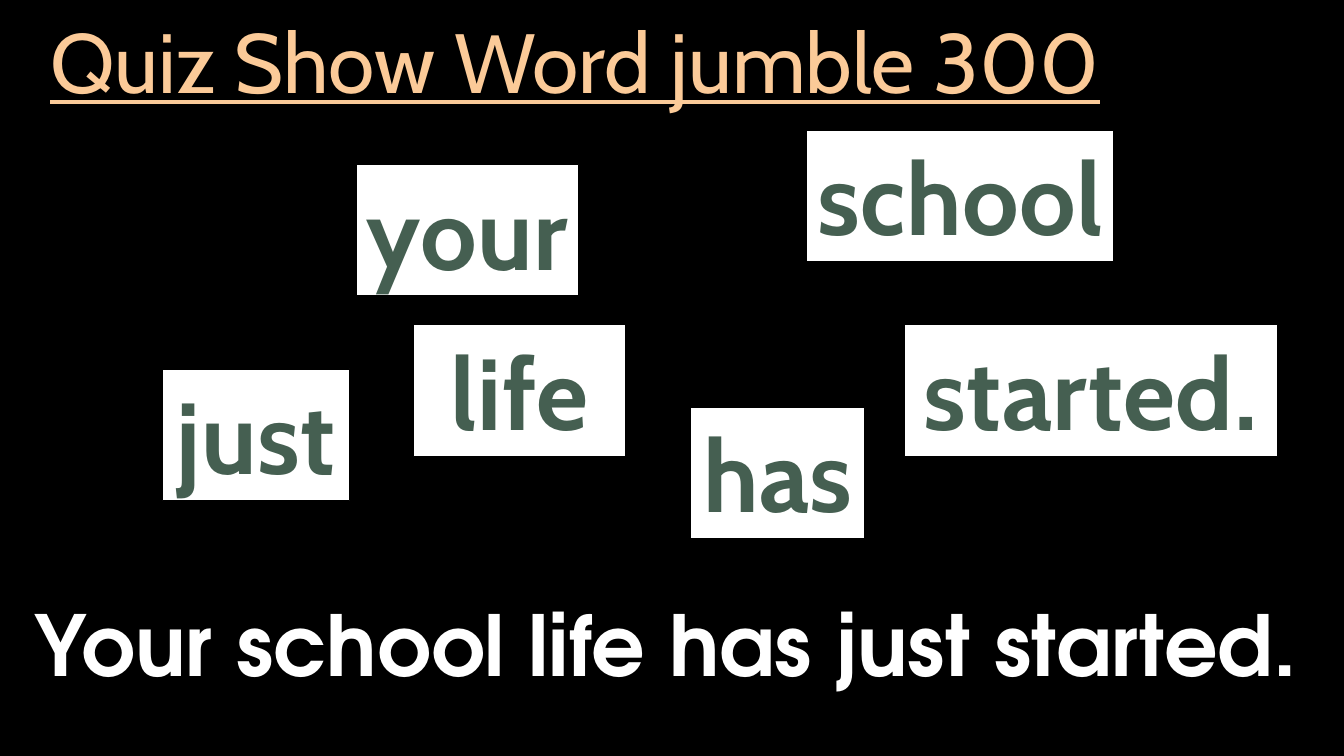
from pptx import Presentation
from pptx import util as u
from pptx.dml import color
from pptx.enum import shapes, text

HUES = {"night": "000000", "peach": "FBCA98", "card": "FFFFFF", "green": "455F51"}
HIGH = 17.45
CARDS = [
    ("your", 26.48, 21.73, 16.58),
    ("has", 51.39, 53.87, 12.98),
    ("life", 30.76, 42.93, 15.83),
    ("started.", 67.29, 42.93, 27.76),
    ("just", 12.08, 48.8, 13.95),
    ("school", 60.02, 17.2, 22.88),
]


def hue(name):
    return color.RGBColor.from_string(HUES[name])


def write(shape, words, size, tint, font="Cabin", bold=False, line=False,
          align=text.PP_ALIGN.CENTER, anchor=text.MSO_ANCHOR.TOP,
          wrap=False, grow=True, lead=1.0, track=0):
    frame = shape.text_frame
    frame.word_wrap = wrap
    frame.vertical_anchor = anchor
    fit = text.MSO_AUTO_SIZE
    frame.auto_size = fit.SHAPE_TO_FIT_TEXT if grow else fit.NONE
    para = frame.paragraphs[0]
    para.alignment = align
    para.line_spacing = lead
    run = para.add_run()
    run.text = words
    run.font.name = font
    run.font.size = u.Pt(size)
    run.font.bold = bold
    run.font.underline = line
    run.font.color.rgb = hue(tint)
    if track:
        run.font._element.set("spc", str(track))


class Deck:
    """Draws in a fixed style on one slide, with lengths in percent of its size."""

    def __init__(self):
        self.show = Presentation()
        self.show.slide_width = u.Inches(13.33)
        self.show.slide_height = u.Inches(7.5)
        self.slide = self.show.slides.add_slide(self.show.slide_layouts[6])
        fill = self.slide.background.fill
        fill.solid()
        fill.fore_color.rgb = hue("night")

    def area(self, left, top, wide, high):
        across, down = self.show.slide_width, self.show.slide_height
        return [int(share * side / 100) for share, side in
                ((left, across), (top, down), (wide, across), (high, down))]

    def label(self, words, area, **style):
        box = self.slide.shapes.add_textbox(*self.area(*area))
        write(box, words, 60, **style)

    def card(self, word, left, top, wide):
        box = self.slide.shapes.add_shape(
            shapes.MSO_SHAPE.RECTANGLE, *self.area(left, top, wide, HIGH))
        box.shadow.inherit = False
        box.fill.solid()
        box.fill.fore_color.rgb = hue("card")
        box.line.color.rgb = hue("night")
        box.line.width = u.Pt(1)
        write(box, word, 72, "green", bold=True, wrap=word == "life", track=50)


def main():
    deck = Deck()
    deck.label("Quiz Show Word jumble 300", (3, 2.13, 85.45, 13.2),
               tint="peach", line=True, align=text.PP_ALIGN.LEFT,
               anchor=text.MSO_ANCHOR.MIDDLE, wrap=True, grow=False, lead=0.9)
    for card in CARDS:
        deck.card(*card)
    deck.label("Your school life has just started.", (1.2, 77.73, 96.7, 14.8),
               tint="card", font="TeX Gyre Adventor", bold=True)
    deck.show.save("out.pptx")


if __name__ == "__main__":
    main()
